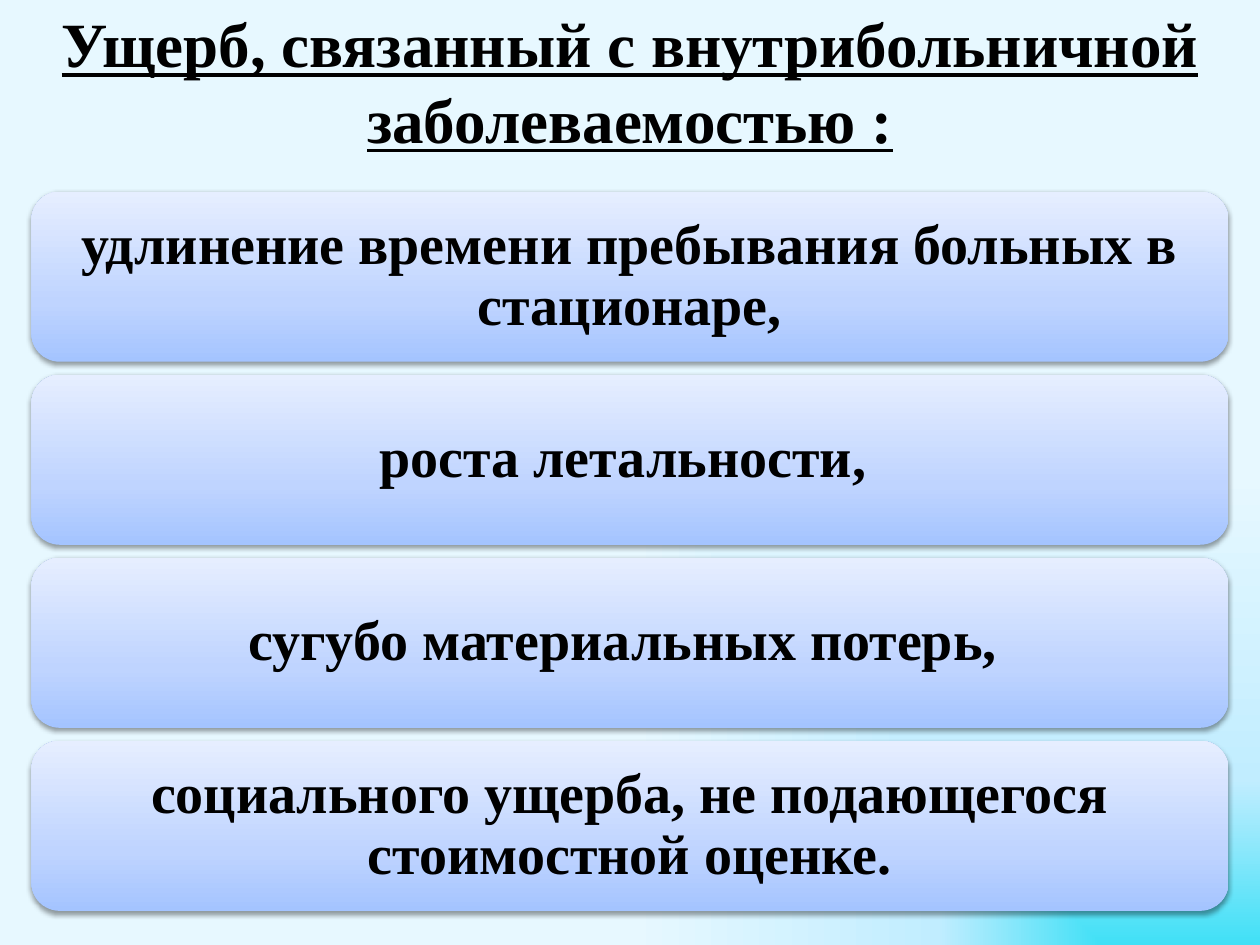
from dataclasses import dataclass

from lxml.etree import SubElement
from pptx import Presentation
from pptx.dml.color import RGBColor
from pptx.enum.shapes import MSO_SHAPE
from pptx.enum.text import MSO_ANCHOR, MSO_AUTO_SIZE, PP_ALIGN
from pptx.oxml import parse_xml
from pptx.oxml.ns import nsdecls, qn
from pptx.util import Pt


@dataclass(frozen=True)
class Theme:
    font: str = "Times New Roman"
    text: str = "000000"
    shadow: str = "000000"
    title_size: int = 36
    item_size: int = 32
    page_stops: tuple = ((0, "40E0F6"), (35, "C1EDFF"), (100, "E7F8FF"))
    panel_stops: tuple = ((0, "A4C4FF"), (35, "BFD4FF"), (100, "E6EEFF"))


@dataclass(frozen=True)
class Box:
    left: float
    top: float
    width: float
    height: float

    def place(self):
        return Pt(self.left), Pt(self.top), Pt(self.width), Pt(self.height)


THEME = Theme()
TITLE = "Ущерб, связанный с внутрибольничной заболеваемостью :"
ITEMS = (
    "удлинение времени пребывания больных в стационаре,",
    "роста летальности, ",
    "сугубо материальных потерь, ",
    "социального ущерба, не подающегося стоимостной оценке.",
)


def set_gradient(fill, parent, stops, direction):
    fill.gradient()
    gradient = parent.find(".//" + qn("a:gradFill"))
    gradient.clear()
    gradient.set("rotWithShape", "1")
    stop_list = SubElement(gradient, qn("a:gsLst"))
    for position, color in stops:
        stop = SubElement(stop_list, qn("a:gs"), pos=str(position * 1000))
        SubElement(stop, qn("a:srgbClr"), val=color)
    gradient.append(parse_xml(direction))


def add_shadow(shape):
    shape.shadow.inherit = False
    effects = shape._element.spPr.find(qn("a:effectLst"))
    shadow = SubElement(
        effects, qn("a:outerShdw"), blurRad=str(Pt(3.1)), dist=str(Pt(1.6)),
        dir="5400000", rotWithShape="0",
    )
    color = SubElement(shadow, qn("a:srgbClr"), val=THEME.shadow)
    SubElement(color, qn("a:alpha"), val="38000")


def write_text(shape, text, size, underline=False):
    frame = shape.text_frame
    frame.text = text
    frame.word_wrap = True
    frame.auto_size = MSO_AUTO_SIZE.NONE
    frame.vertical_anchor = MSO_ANCHOR.MIDDLE
    para = frame.paragraphs[0]
    para.alignment = PP_ALIGN.CENTER
    for span in para.runs:
        span.font.name = THEME.font
        span.font.size = Pt(size)
        span.font.bold = True
        span.font.underline = underline
        span.font.color.rgb = RGBColor.from_string(THEME.text)
    return frame


def paint_page(page):
    direction = (
        f'<a:path {nsdecls("a")} path="rect">'
        '<a:fillToRect l="100000" t="100000"/></a:path>'
    )
    set_gradient(page.background.fill, page._element, THEME.page_stops, direction)


def place_title(page, box):
    title = page.shapes.title
    title.left, title.top, title.width, title.height = box.place()
    write_text(title, TITLE, THEME.title_size, underline=True)


def add_panel(page, box, text):
    panel = page.shapes.add_shape(MSO_SHAPE.ROUNDED_RECTANGLE, *box.place())
    direction = f'<a:lin {nsdecls("a")} ang="16200000" scaled="0"/>'
    set_gradient(panel.fill, panel._element, THEME.panel_stops, direction)
    panel.line.fill.background()
    add_shadow(panel)
    frame = write_text(panel, text, THEME.item_size)
    frame.margin_left = frame.margin_right = Pt(9.4)
    frame.margin_top = frame.margin_bottom = Pt(9.4)
    frame.paragraphs[0].line_spacing = 0.9


def add_panel_stack(page, box, gap):
    height = (box.height - gap * (len(ITEMS) - 1)) / len(ITEMS)
    for index, text in enumerate(ITEMS):
        top = box.top + index * (height + gap)
        add_panel(page, Box(box.left, top, box.width, height), text)


def main():
    deck = Presentation()
    deck.slide_width, deck.slide_height = Pt(720), Pt(540)
    page = deck.slides.add_slide(deck.slide_layouts[5])
    paint_page(page)
    place_title(page, Box(0, 3, 720, 86))
    add_panel_stack(page, Box(18, 109.5, 684, 411), gap=7.4)
    deck.save("out.pptx")


if __name__ == "__main__":
    main()
